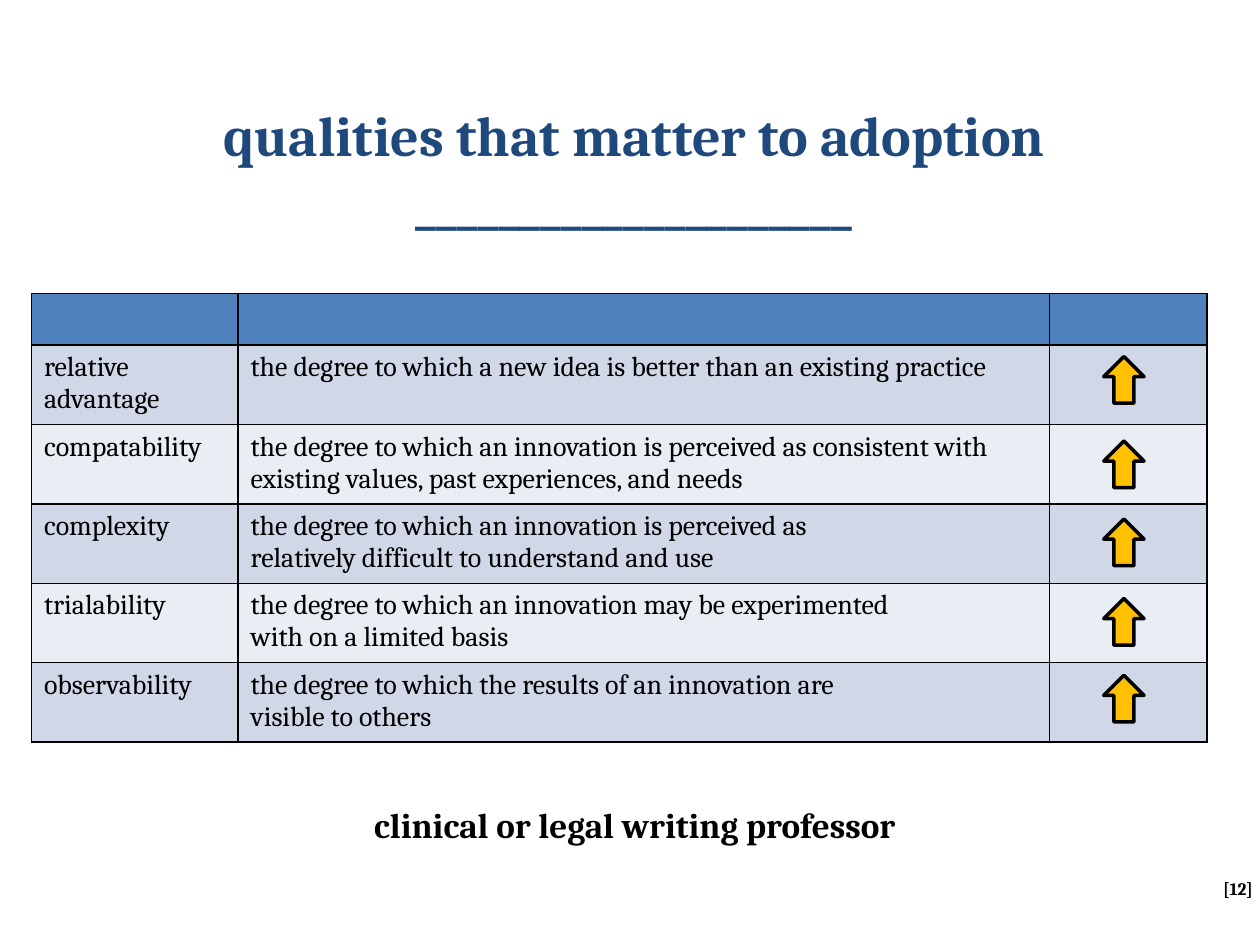
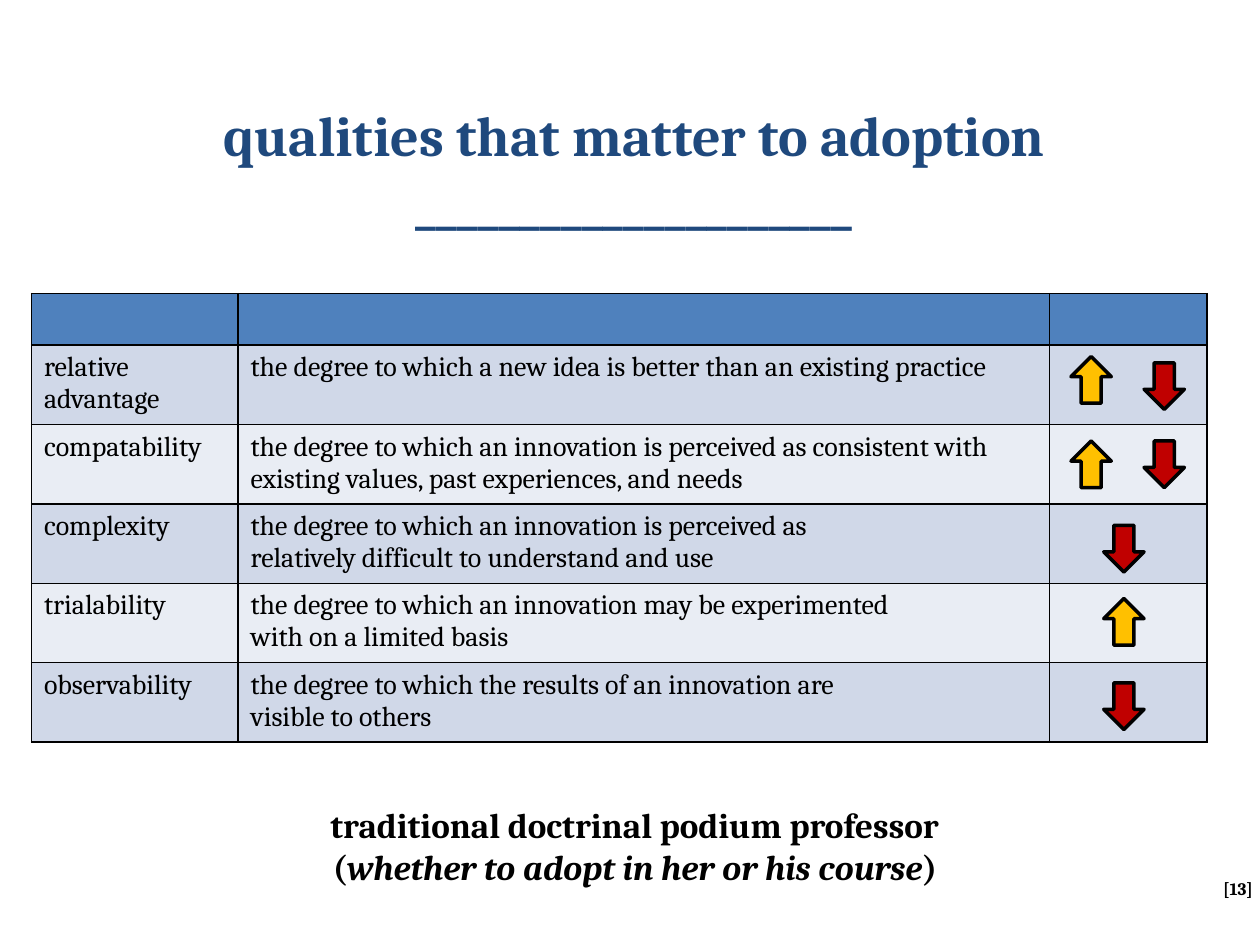
from pptx import Presentation, util as u
from pptx.dml.color import RGBColor
from pptx.enum import shapes, text
from pptx.oxml import parse_xml
from pptx.oxml.ns import nsdecls

INK, NAVY, BLUE = "000000", "1F497D", "4F81BD"
BANDS = ("D0D8E8", "E9EDF4")
GOLD, RED = "FFC000", "C00000"
LEFT, MID = text.PP_ALIGN.LEFT, text.PP_ALIGN.CENTER
COLS = (1.64, 6.44, 1.25)
HEAD, ROW = 0.41, 0.63
TRAITS = (
    ("relative advantage",
     ["the degree to which a new idea is better than an existing practice"]),
    ("compatability",
     ["the degree to which an innovation is perceived as consistent with "
      "existing values, past experiences, and needs"]),
    ("complexity",
     ["the degree to which an innovation is perceived as",
      "relatively difficult to understand and use"]),
    ("trialability",
     ["the degree to which an innovation may be experimented",
      "with on a limited basis"]),
    ("observability",
     ["the degree to which the results of an innovation are",
      "visible to others"]),
)
UPS = (2.83, 3.5, 4.12, 4.75, 5.36)
DOWNS = (2.88, 3.5, 4.17, 4.8, 5.42)
EAST, WEST, CORE = 9.08, 8.5, 8.76


def hue(code):
    return RGBColor.from_string(code)


def inch(*nums):
    return [u.Inches(n) for n in nums]


def write(frame, lines, size=16, color=INK, bold=False, align=LEFT):
    for i, line in enumerate(lines):
        para = frame.paragraphs[0] if i == 0 else frame.add_paragraph()
        para.alignment = align
        for k, part in enumerate(line.split("*")):
            run = para.add_run()
            run.text = part
            font = run.font
            font.name, font.size, font.bold = "Cambria", u.Pt(size), bold
            font.italic = k % 2 == 1
            font.color.rgb = hue(color)


class Deck:
    def __init__(self):
        self.prs = Presentation()
        self.prs.slide_width, self.prs.slide_height = inch(10, 7.5)
        self.slide = None

    def start(self):
        self.slide = self.prs.slides.add_slide(self.prs.slide_layouts[5])

    def title(self, lines):
        box = self.slide.shapes.title
        box.left, box.top, box.width, box.height = inch(1.11, 0.75, 7.85, 1.18)
        frame = box.text_frame
        frame.auto_size = text.MSO_AUTO_SIZE.NONE
        frame.vertical_anchor = text.MSO_ANCHOR.TOP
        write(frame, lines, size=32, color=NAVY, bold=True, align=MID)

    def label(self, place, lines, **style):
        frame = self.slide.shapes.add_textbox(*inch(*place)).text_frame
        frame.word_wrap = False
        write(frame, lines, bold=True, **style)

    def cell(self, cell, fill, lines=()):
        props = cell._tc.get_or_add_tcPr()
        for side in "LRTB":
            props.append(parse_xml(
                f'<a:ln{side} {nsdecls("a")} w="12700"><a:solidFill>'
                f'<a:srgbClr val="{INK}"/></a:solidFill></a:ln{side}>'))
        cell.fill.solid()
        cell.fill.fore_color.rgb = hue(fill)
        write(cell.text_frame, lines)

    def table(self):
        high = HEAD + ROW * len(TRAITS)
        grid = self.slide.shapes.add_table(
            len(TRAITS) + 1, len(COLS), *inch(0.25, 2.33, sum(COLS), high)).table
        for col, wide in zip(grid.columns, COLS):
            col.width = u.Inches(wide)
        for i, row in enumerate(grid.rows):
            row.height = u.Inches(ROW if i else HEAD)
            fill = BANDS[(i - 1) % 2] if i else BLUE
            name, sense = TRAITS[i - 1] if i else ("", [])
            for cell, lines in zip(row.cells, ([name] if name else [], sense, [])):
                self.cell(cell, fill, lines)

    def arrow(self, kind, fill, left, top):
        mark = self.slide.shapes.add_shape(kind, *inch(left, top, 0.32, 0.37))
        mark.shadow.inherit = False
        mark.fill.solid()
        mark.fill.fore_color.rgb = hue(fill)
        mark.line.color.rgb = hue(INK)
        mark.line.width = u.Pt(2)

    def page(self, role, place, ups, downs, number):
        self.start()
        self.title(["qualities that matter to adoption", "_" * 21])
        self.table()
        self.label(place, role, size=20, align=MID)
        for row, left in ups.items():
            self.arrow(shapes.MSO_SHAPE.UP_ARROW, GOLD, left, UPS[row])
        for row, left in downs.items():
            self.arrow(shapes.MSO_SHAPE.DOWN_ARROW, RED, left, DOWNS[row])
        self.label((9.61, 6.92, 0.47, 0.27), [f"[{number}]"], size=10)


def main():
    deck = Deck()
    deck.page(["clinical or legal writing professor"], (2.5, 6.33, 5.08, 0.44),
              {row: CORE for row in range(len(TRAITS))}, {}, 12)
    deck.page(["traditional doctrinal podium professor",
               "(*whether to adopt in her or his course*)"],
              (2.11, 6.33, 5.86, 0.77),
              {0: WEST, 1: WEST, 3: CORE},
              {0: EAST, 1: EAST, 2: CORE, 4: CORE}, 13)
    deck.prs.save("out.pptx")


if __name__ == "__main__":
    main()
